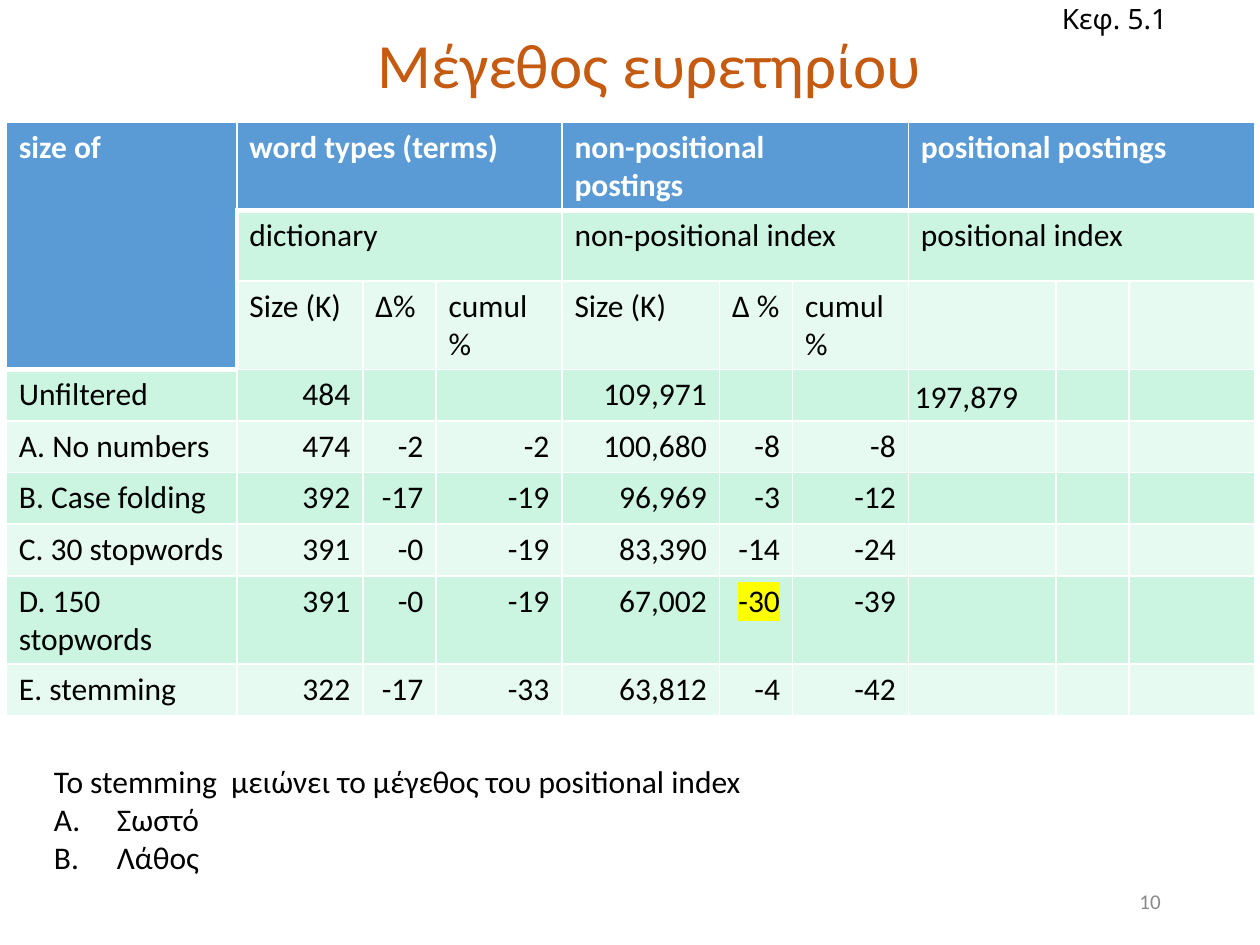
from dataclasses import dataclass
from typing import Any

from lxml import etree
from pptx import Presentation
from pptx import util as u
from pptx.dml.color import RGBColor
from pptx.enum import text
from pptx.oxml import ns

HEADER, DARK_BAND, LIGHT_BAND = "5B9BD5", "CBF5E1", "E7FAF1"
LEFT, CENTER, RIGHT = text.PP_ALIGN.LEFT, text.PP_ALIGN.CENTER, text.PP_ALIGN.RIGHT
TOP, MIDDLE = text.MSO_ANCHOR.TOP, text.MSO_ANCHOR.MIDDLE

COLUMN_WIDTHS = [1.83, 1, 0.58, 1, 1.25, 0.58, 0.92, 1.17, 0.58, 1]
ROW_HEIGHTS = [0.67, 0.56, 0.43] + [0.41] * 6
GROUP_STARTS = [1, 4, 7]
ROWS = [
    ["size of", "word types (terms)", "", "", "non-positional\npostings", "", "",
     "positional postings"],
    ["", "dictionary", "", "", "non-positional index", "", "", "positional index"],
    ["", "Size (K)", "∆%", "cumul %", "Size (K)", "∆ %", "cumul %"],
    ["Unfiltered", "484", "", "", "109,971"],
    ["Α. No numbers", "474", "-2", "-2", "100,680", "-8", "-8"],
    ["Β. Case folding", "392", "-17", "-19", "96,969", "-3", "-12"],
    ["C. 30 stopwords", "391", "-0", "-19", "83,390", "-14", "-24"],
    ["D. 150 stopwords", "391", "-0", "-19", "67,002", "-30", "-39"],
    ["E. stemming", "322", "-17", "-33", "63,812", "-4", "-42"],
]


def rgb(value):
    return RGBColor.from_string(value)


def add_xml(parent, tag, **attributes):
    return etree.SubElement(parent, ns.qn(tag), attributes)


@dataclass
class SlideBuilder:
    """Hold the text style and the slide that receives each element."""

    slide: Any
    font: str = "Calibri"
    size: float = 18
    color: str = "000000"

    def format(self, frame, align=LEFT, size=None, color=None, font=None, bold=False):
        for paragraph in frame.paragraphs:
            paragraph.alignment = align
            for run in paragraph.runs:
                run.font.size = u.Pt(size or self.size)
                run.font.name = font or self.font
                run.font.bold = bold
                run.font.color.rgb = rgb(color or self.color)

    def textbox(self, content, left, top, width, height, anchor=TOP, wrap=True, **style):
        shape = self.slide.shapes.add_textbox(*map(u.Inches, (left, top, width, height)))
        frame = shape.text_frame
        frame.text = content
        frame.word_wrap = wrap
        frame.vertical_anchor = anchor
        self.format(frame, **style)
        return frame

    def number(self, paragraph):
        properties = paragraph._p.get_or_add_pPr()
        properties.set("marL", str(u.Inches(0.5)))
        properties.set("indent", str(u.Inches(-0.5)))
        add_xml(properties, "a:buFont", typeface="+mj-lt")
        add_xml(properties, "a:buAutoNum", type="alphaUcPeriod")

    def highlight(self, cell, color):
        run = cell.text_frame.paragraphs[0].runs[0]
        fill = run._r.get_or_add_rPr().find(ns.qn("a:solidFill"))
        mark = etree.Element(ns.qn("a:highlight"))
        add_xml(mark, "a:srgbClr", val=color)
        fill.addnext(mark)

    def borders(self, cell, thick_sides):
        properties = cell._tc.get_or_add_tcPr()
        for side in "LRTB":
            width = u.Pt(3 if side in thick_sides else 1)
            line = add_xml(properties, f"a:ln{side}", w=str(width))
            add_xml(add_xml(line, "a:solidFill"), "a:srgbClr", val="FFFFFF")

    def table(self, left, top):
        size = sum(COLUMN_WIDTHS), sum(ROW_HEIGHTS)
        frame = self.slide.shapes.add_table(
            len(ROWS), len(COLUMN_WIDTHS), *map(u.Inches, (left, top, *size)))
        table = frame.table
        for column, width in zip(table.columns, COLUMN_WIDTHS):
            column.width = u.Inches(width)
        for row, height in zip(table.rows, ROW_HEIGHTS):
            row.height = u.Inches(height)
        for row, values in enumerate(ROWS):
            for column in range(len(COLUMN_WIDTHS)):
                value = values[column] if column < len(values) else ""
                self.cell(table.cell(row, column), row, column, value)
        table.cell(0, 0).merge(table.cell(2, 0))
        for row in (0, 1):
            for start in GROUP_STARTS:
                table.cell(row, start).merge(table.cell(row, start + 2))
        return table

    def cell(self, cell, row, column, value):
        is_header = row == 0 or (column == 0 and row < 3)
        thick = ""
        if row == 0 or (row, column) == (2, 0):
            thick += "B"
        if (row == 1 and column > 0) or (row, column) == (3, 0):
            thick += "T"
        if row in (1, 2) and column < 2:
            thick += "RL"[column]
        self.borders(cell, thick)
        cell.fill.solid()
        band = DARK_BAND if row % 2 else LIGHT_BAND
        cell.fill.fore_color.rgb = rgb(HEADER if is_header else band)
        if value:
            cell.text_frame.text = value
            self.format(cell.text_frame, RIGHT if row > 2 and column else LEFT,
                        color="FFFFFF" if is_header else None, bold=is_header)


def main():
    presentation = Presentation()
    presentation.slide_width, presentation.slide_height = u.Inches(10), u.Inches(7.5)
    builder = SlideBuilder(presentation.slides.add_slide(presentation.slide_layouts[6]))

    title = builder.textbox("Μέγεθος ευρετηρίου", 0.57, 0, 9.17, 1.08, MIDDLE,
                            align=CENTER, size=36, color="C55A11")
    title.paragraphs[0].line_spacing = 0.9
    table = builder.table(0.05, 0.97)
    builder.highlight(table.cell(7, 5), "FFFF00")
    builder.textbox("10", 7.06, 6.95, 2.25, 0.4, MIDDLE,
                    align=RIGHT, size=12, color="898989")
    builder.textbox("Κεφ. 5.1", 8.33, -0.04, 1.1, 0.37, MIDDLE, wrap=False,
                    size=16, font="Noto Sans")
    builder.textbox("197,879", 7.15, 2.94, 1.03, 0.4, wrap=False, align=RIGHT)
    question = builder.textbox(
        "Το stemming  μειώνει το μέγεθος του positional index\nΣωστό\nΛάθος",
        0.33, 6, 7.33, 1.01)
    for paragraph in question.paragraphs[1:]:
        builder.number(paragraph)
    presentation.save("out.pptx")


if __name__ == "__main__":
    main()
